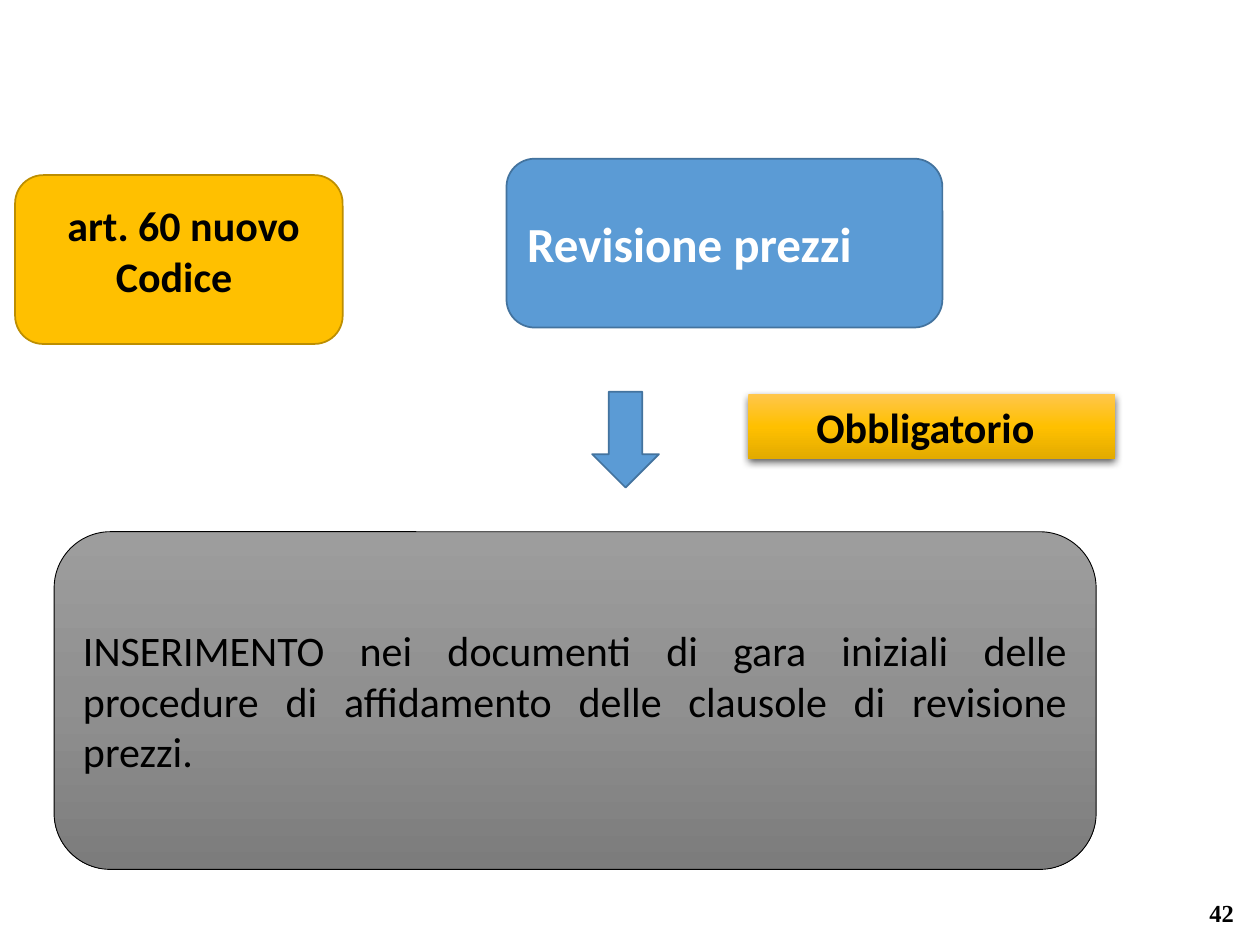
from copy import deepcopy
from dataclasses import dataclass

from lxml import etree
from pptx import Presentation
from pptx.dml.color import RGBColor
from pptx.enum import shapes, text
from pptx.oxml import ns
from pptx.util import Inches, Pt


@dataclass(frozen=True)
class Theme:
    font: str = "Calibri"
    number_font: str = "Times New Roman"
    black: str = "000000"
    white: str = "FFFFFF"
    gold: str = "FFC000"
    gold_line: str = "BD8E00"
    blue: str = "5B9BD5"
    blue_line: str = "43739E"
    gray_gradient: tuple = ("9D9D9D", "909090", "7C7C7C")
    gold_gradient: tuple = ("FFC64B", "FFC000", "E3AB00")
    title: int = 28
    body: int = 24
    number: int = 14


theme = Theme()
kind = shapes.MSO_SHAPE
align = text.PP_ALIGN


def add_box(shape_kind, box, fill, line, line_width=1):
    sp = s.shapes.add_shape(shape_kind, *map(Inches, box))
    sp.shadow.inherit = False
    if isinstance(fill, tuple):
        sp.fill.gradient()
        sp.fill.gradient_angle = 270
        stops = sp._element.spPr.find(ns.qn("a:gradFill")).find(ns.qn("a:gsLst"))
        stops.insert(1, deepcopy(stops[0]))
        for i, (stop, color) in enumerate(zip(sp.fill.gradient_stops, fill)):
            stop.position = i / 2
            stop.color.rgb = RGBColor.from_string(color)
    else:
        sp.fill.solid()
        sp.fill.fore_color.rgb = RGBColor.from_string(fill)
    if line:
        sp.line.color.rgb = RGBColor.from_string(line)
        sp.line.width = Pt(line_width)
    else:
        sp.line.fill.background()
    return sp


def write(sp, words, size, color, alignment, bold=True, font=theme.font):
    tf = sp.text_frame
    tf.word_wrap = True
    tf.vertical_anchor = text.MSO_ANCHOR.MIDDLE
    p = tf.paragraphs[0]
    p.text = words
    p.alignment = alignment
    p.font.name = font
    p.font.size = Pt(size)
    p.font.bold = bold
    p.font.color.rgb = RGBColor.from_string(color)


prs = Presentation()
prs.slide_width, prs.slide_height = Inches(10), Inches(7.5)
s = prs.slides.add_slide(prs.slide_layouts[6])

number = s.shapes.add_textbox(Inches(7.64), Inches(7.04), Inches(2.25), Inches(0.4))
write(number, "42", theme.number, theme.black, align.RIGHT, font=theme.number_font)

article = add_box(kind.ROUNDED_RECTANGLE, (0.12, 1.39, 2.6, 1.34), theme.gold, theme.gold_line)
write(article, " art. 60 nuovo Codice ", theme.body, theme.black, align.CENTER)
article.text_frame.margin_bottom = Inches(0.2)

topic = add_box(kind.ROUNDED_RECTANGLE, (4.02, 1.26, 3.46, 1.34), theme.blue, theme.blue_line)
write(topic, "Revisione prezzi", theme.title, theme.white, align.JUSTIFY)

clause = add_box(kind.ROUNDED_RECTANGLE, (0.43, 4.22, 8.27, 2.68), theme.gray_gradient, theme.black, 0.5)
write(clause, "INSERIMENTO nei documenti di gara iniziali delle procedure di affidamento "
      "delle clausole di revisione prezzi.", theme.body, theme.black, align.JUSTIFY, bold=False)

add_box(kind.DOWN_ARROW, (4.7, 3.11, 0.53, 0.76), theme.blue, theme.blue_line)

mandatory = add_box(kind.RECTANGLE, (5.94, 3.13, 2.91, 0.51), theme.gold_gradient, None)
write(mandatory, "Obbligatorio", theme.body, theme.black, align.CENTER)
mandatory.text_frame.margin_right = Inches(0.2)
effects = mandatory._element.spPr.find(ns.qn("a:effectLst"))
shadow = etree.SubElement(effects, ns.qn("a:outerShdw"), blurRad=str(Pt(4.5)),
                          dist=str(Pt(1.5)), dir="5400000", algn="ctr", rotWithShape="0")
shade = etree.SubElement(shadow, ns.qn("a:srgbClr"), val=theme.black)
etree.SubElement(shade, ns.qn("a:alpha"), val="63000")

prs.save("out.pptx")
